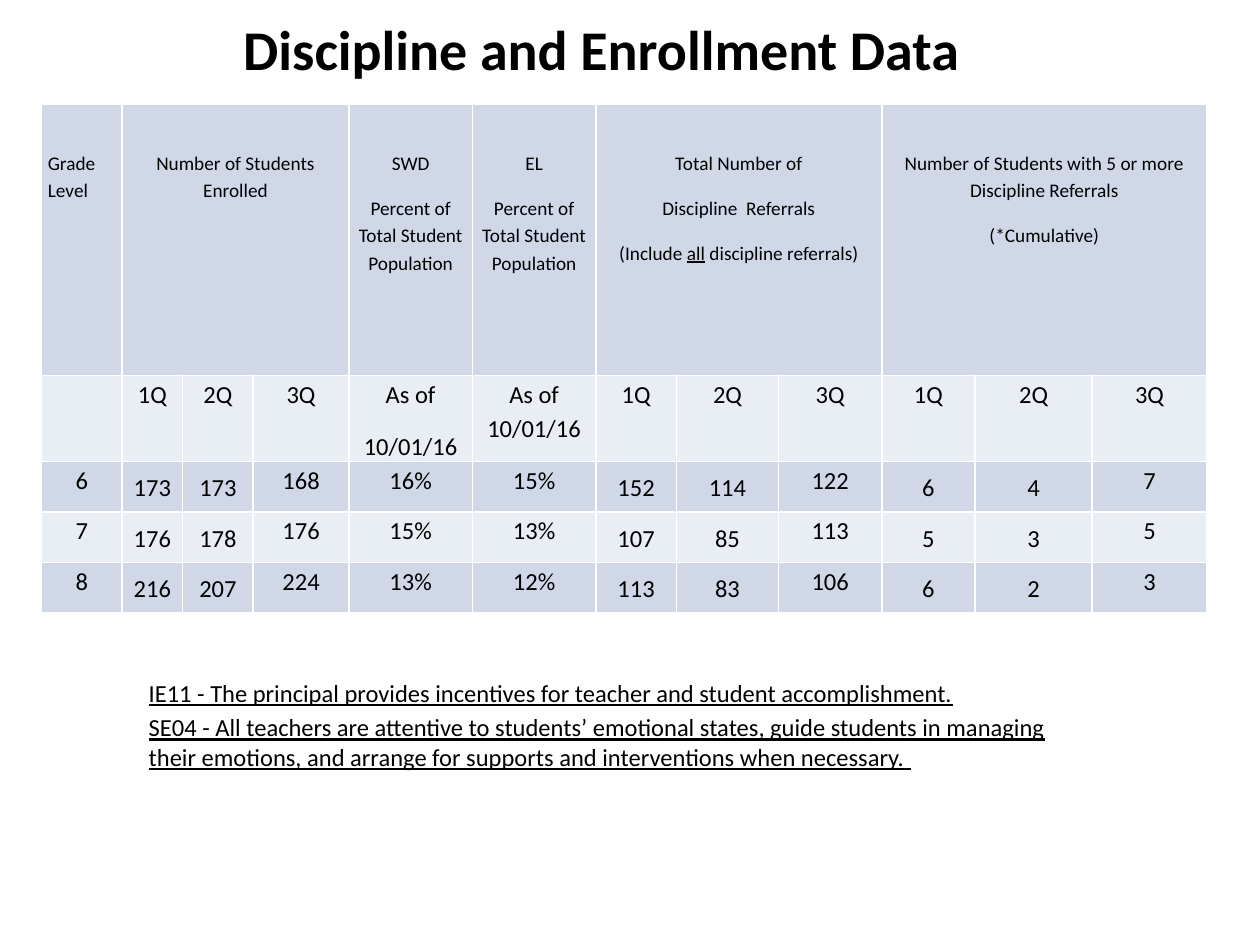
from dataclasses import dataclass

from lxml.etree import SubElement
from pptx import Presentation
from pptx.dml.color import RGBColor
from pptx.enum.text import MSO_ANCHOR, PP_ALIGN
from pptx.oxml.ns import qn
from pptx.util import Inches, Pt


@dataclass(frozen=True)
class Theme:
    """Colours, typeface and type sizes of the slide."""
    font: str = "Calibri"
    ink: RGBColor = RGBColor(0, 0, 0)
    bands: tuple = (RGBColor(0xD0, 0xD8, 0xE8), RGBColor(0xE9, 0xED, 0xF4))
    rule: str = "FFFFFF"
    title: int = 32
    text: int = 14
    heading: int = 11


THEME = Theme()
COLUMN_WIDTHS = (0.64, 0.48, 0.56, 0.76, 0.98, 0.98, 0.64, 0.81, 0.82, 0.74, 0.93, 0.91)
ROW_HEIGHTS = (2.15, 0.66, 0.4, 0.4, 0.4)
HEADINGS = {
    0: (1, ["Grade Level"]),
    1: (3, ["Number of Students Enrolled"]),
    4: (1, ["SWD", "Percent of Total Student Population"]),
    5: (1, ["EL", "Percent of Total Student Population"]),
    6: (3, ["Total Number of", "Discipline  Referrals",
            "(Include _all_ discipline referrals)"]),
    9: (3, ["Number of Students with 5 or more Discipline Referrals", "(*Cumulative)"]),
}
QUARTERS = ["1Q", "2Q", "3Q"]
PERIODS = ["", *QUARTERS, "As of|10/01/16", "As of 10/01/16", *QUARTERS, *QUARTERS]
GRADES = [
    ["6", "173", "173", "168", "16%", "15%", "152", "114", "122", "6", "4", "7"],
    ["7", "176", "178", "176", "15%", "13%", "107", "85", "113", "5", "3", "5"],
    ["8", "216", "207", "224", "13%", "12%", "113", "83", "106", "6", "2", "3"],
]
EARLIER_QUARTERS = (1, 2, 6, 7, 9, 10)
INDICATORS = [
    "IE11 - The principal provides incentives for teacher and student accomplishment.",
    "SE04 - All teachers are attentive to students’ emotional states, guide students in "
    "managing their emotions, and arrange for supports and interventions when necessary. ",
]


def apply(target, **values):
    """Set every given attribute on the target."""
    for name, value in values.items():
        setattr(target, name, value)


def place(placeholder, left, top, width, height):
    """Move and size a placeholder, in inches."""
    apply(placeholder, left=Inches(left), top=Inches(top),
          width=Inches(width), height=Inches(height))


def write(frame, paragraphs, size, layout, bold=False, underline=False):
    """Fill a text frame; underscores toggle underlining."""
    for index, wording in enumerate(paragraphs):
        paragraph = frame.add_paragraph() if index else frame.paragraphs[0]
        apply(paragraph, **layout)
        for part, piece in enumerate(wording.split("_")):
            run = paragraph.add_run()
            run.text = piece
            apply(run.font, name=THEME.font, size=Pt(size), bold=bold,
                  underline=underline or part % 2 == 1)
            run.font.color.rgb = THEME.ink


def style_cell(cell, band, side=0.05, top=0, bottom=0):
    """Give a cell its margins, white rules and band colour."""
    apply(cell, margin_left=Inches(side), margin_right=Inches(side),
          margin_top=Inches(top), margin_bottom=Inches(bottom))
    properties = cell._tc.get_or_add_tcPr()
    for edge in ("a:lnL", "a:lnR", "a:lnT", "a:lnB"):
        line = SubElement(properties, qn(edge), w=str(Pt(1)))
        SubElement(SubElement(line, qn("a:solidFill")), qn("a:srgbClr"), val=THEME.rule)
    cell.fill.solid()
    cell.fill.fore_color.rgb = THEME.bands[band]


def cell_layout(alignment=PP_ALIGN.CENTER):
    """Return the paragraph format used in the table."""
    return {"alignment": alignment, "line_spacing": 1.15, "space_after": Pt(10)}


def add_headings(table):
    """Write the top row, merging the cells of each quarterly group."""
    for column in range(len(COLUMN_WIDTHS)):
        style_cell(table.cell(0, column), 0, top=0.35)
    for column, (span, wording) in HEADINGS.items():
        cell = table.cell(0, column)
        if span > 1:
            cell.merge(table.cell(0, column + span - 1))
        alignment = PP_ALIGN.CENTER if column else PP_ALIGN.LEFT
        write(cell.text_frame, wording, THEME.heading, cell_layout(alignment))


def add_rows(table):
    """Write the period row and one row for each grade."""
    for row, entries in enumerate([PERIODS, *GRADES], start=1):
        for column, entry in enumerate(entries):
            cell = table.cell(row, column)
            inset = row > 1 and column in EARLIER_QUARTERS
            margins = {"side": 0.04, "top": 0.06, "bottom": 0.06} if inset else {}
            style_cell(cell, row % 2, **margins)
            if entry:
                write(cell.text_frame, entry.split("|"), THEME.text, cell_layout())


def add_data_table(slide):
    """Add the discipline and enrollment table."""
    table = slide.shapes.add_table(
        len(ROW_HEIGHTS), len(COLUMN_WIDTHS), Inches(0.33), Inches(0.83),
        Inches(sum(COLUMN_WIDTHS)), Inches(sum(ROW_HEIGHTS))).table
    apply(table, first_row=False, horz_banding=False)
    for column, width in zip(table.columns, COLUMN_WIDTHS):
        column.width = Inches(width)
    for row, height in zip(table.rows, ROW_HEIGHTS):
        row.height = Inches(height)
    add_headings(table)
    add_rows(table)


def add_title(slide):
    """Fill the title placeholder."""
    title = slide.shapes.title
    place(title, 1.83, 0.08, 6, 0.62)
    title.text_frame.vertical_anchor = MSO_ANCHOR.BOTTOM
    write(title.text_frame, ["Discipline and Enrollment Data"], THEME.title,
          {"alignment": PP_ALIGN.LEFT}, bold=True)


def add_indicators(slide):
    """Fill the body placeholder with the unbulleted indicators."""
    indicators = slide.placeholders[1]
    place(indicators, 1.08, 5.33, 7.67, 1.75)
    write(indicators.text_frame, INDICATORS, THEME.text,
          {"space_before": Pt(THEME.text * 0.2)}, underline=True)
    for paragraph in indicators.text_frame.paragraphs:
        properties = paragraph._p.get_or_add_pPr()
        properties.set("marL", "0")
        properties.set("indent", "0")
        SubElement(properties, qn("a:buNone"))


def main():
    """Build and save the slide."""
    presentation = Presentation()
    apply(presentation, slide_width=Inches(10), slide_height=Inches(7.5))
    slide = presentation.slides.add_slide(presentation.slide_layouts[1])
    add_title(slide)
    add_data_table(slide)
    add_indicators(slide)
    presentation.save("out.pptx")


if __name__ == "__main__":
    main()
